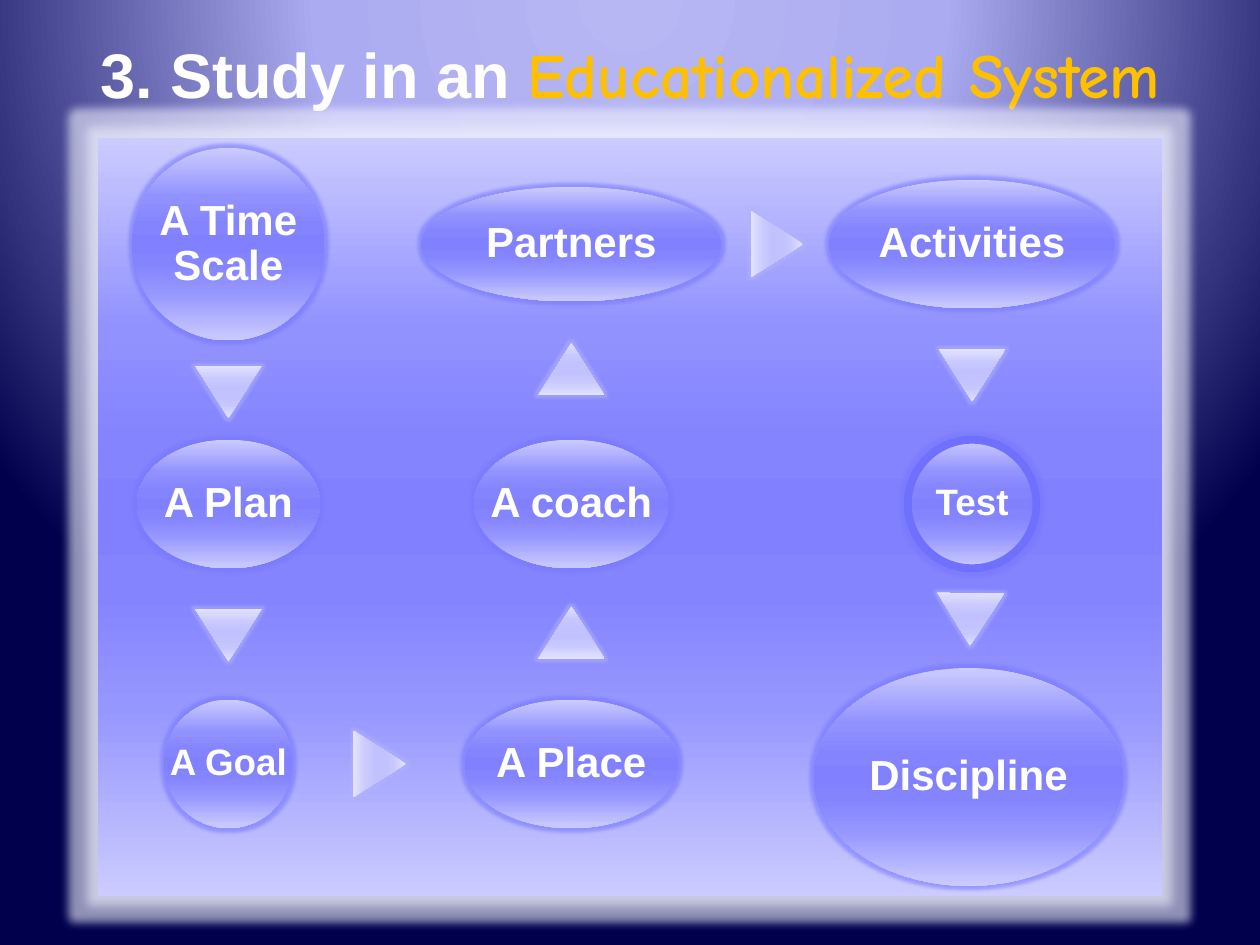
"""Build a slide showing the nine linked stages of an educational study system."""
import pptx
import pptx.util
import pptx.dml.color
import pptx.enum.shapes
import pptx.enum.text
import pptx.oxml
import pptx.oxml.ns
from lxml import etree

Pt = pptx.util.Pt
qn = pptx.oxml.ns.qn
SHAPES = pptx.enum.shapes.MSO_SHAPE

COLORS = {
    "text": "FFFFFF", "accent": "FFC000", "ring": "7070FF",
    "panel_glow": "F0F0FF", "stage_glow": "7878FF", "arrow_glow": "B4B4FF",
}
BACKGROUND = [(0, "B7B7F3"), (40, "ABABF1"), (100, "00004C")]
SHEEN_STOPS = (0, 25, 40, 50, 60, 75, 100)
STAGE_FILL = list(zip(SHEEN_STOPS, (
    "CBCBFF", "9292FF", "8484FF", "8181FF", "8484FF", "9696FF", "CBCBFF")))
ARROW_FILL = list(zip(SHEEN_STOPS, (
    "E2E2FF", "C7C7FF", "C2C2FF", "C1C1FF", "C2C2FF", "C9C9FF", "E2E2FF")))

TITLE = [("3. Study in an ", "Arial", "text"),
         ("Educationalized System", "Comic Neue", "accent")]
LEFT, MIDDLE, RIGHT = 130.5, 326.5, 555.5
TOP, CENTER, BOTTOM = 139.5, 288, 436.5
STAGES = [
    ("A Time\vScale", LEFT, TOP, 110, 110, 24),
    ("A Plan", LEFT, CENTER, 104.5, 73.5, 24),
    ("A Goal", LEFT, BOTTOM, 73.5, 73.5, 21),
    ("A Place", MIDDLE, BOTTOM, 122, 73.5, 24),
    ("A coach", MIDDLE, CENTER, 111, 73.5, 24),
    ("Partners", MIDDLE, TOP, 171.5, 65.5, 24),
    ("Activities", RIGHT, TOP, 163.5, 73.5, 24),
    ("Test", RIGHT, CENTER, 73.5, 73.5, 21),
    ("Discipline", 553.5, 444, 177, 124.5, 24),
]
ARROW_WIDTH, ARROW_HEIGHT = 38, 30
ARROWS = [
    (LEFT, 224, 180), (LEFT, 363, 180), (217, BOTTOM, 90),
    (MIDDLE, 361.5, 0), (MIDDLE, 211, 0), (444, TOP, 90),
    (RIGHT, 214.5, 180), (554.5, 354, 180.8),
]


def rgb(name):
    return pptx.dml.color.RGBColor.from_string(COLORS[name])


def set_gradient(fill, owner, stops, circle=False):
    fill.gradient()
    gradient = next(owner.iter(qn("a:gradFill")))
    for child in list(gradient):
        gradient.remove(child)
    stop_list = etree.SubElement(gradient, qn("a:gsLst"))
    for position, color in stops:
        stop = etree.SubElement(stop_list, qn("a:gs"), pos=str(position * 1000))
        etree.SubElement(stop, qn("a:srgbClr"), val=color)
    if circle:
        course = etree.SubElement(gradient, qn("a:path"), path="circle")
        etree.SubElement(course, qn("a:fillToRect"),
                         l="50000", t="-80000", r="50000", b="180000")
    else:
        etree.SubElement(gradient, qn("a:lin"), ang="5400000", scaled="0")


def add_glowing(page, kind, center_x, center_y, width, height, stops, glow, radius, alpha):
    shape = page.shapes.add_shape(kind, Pt(center_x - width / 2), Pt(center_y - height / 2),
                                  Pt(width), Pt(height))
    shape.shadow.inherit = False
    set_gradient(shape.fill, shape._element.spPr, stops)
    shape.line.fill.background()
    effects = shape._element.spPr.find(qn("a:effectLst"))
    halo = etree.SubElement(effects, qn("a:glow"), rad=str(int(Pt(radius))))
    color = etree.SubElement(halo, qn("a:srgbClr"), val=COLORS[glow])
    etree.SubElement(color, qn("a:alpha"), val=str(alpha * 1000))
    return shape


def write_text(box, parts, size, anchor, inset, spacing=1.0, wrap=False):
    frame = box.text_frame
    frame.word_wrap = wrap
    frame.auto_size = pptx.enum.text.MSO_AUTO_SIZE.NONE
    frame.vertical_anchor = anchor
    frame.margin_left = frame.margin_right = Pt(inset)
    frame.margin_top = frame.margin_bottom = Pt(inset)
    para = frame.paragraphs[0]
    para.alignment = pptx.enum.text.PP_ALIGN.CENTER
    para.line_spacing = spacing
    for text, font, color in parts:
        for index, line in enumerate(text.split("\v")):
            if index:
                para.add_line_break()
            span = para.add_run()
            span.text = line
            span.font.name = font
            span.font.size = Pt(size)
            span.font.bold = True
            span.font.color.rgb = rgb(color)


def main():
    deck = pptx.Presentation()
    deck.slide_width, deck.slide_height = Pt(720), Pt(540)
    page = deck.slides.add_slide(deck.slide_layouts[5])
    set_gradient(page.background.fill, page._element, BACKGROUND, circle=True)

    add_glowing(page, SHAPES.RECTANGLE, 360, 295.5, 608, 433.5, STAGE_FILL,
                "panel_glow", 11, 60)
    for text, center_x, center_y, width, height, size in STAGES:
        stage = add_glowing(page, SHAPES.OVAL, center_x, center_y, width, height,
                            STAGE_FILL, "stage_glow", 4, 60)
        write_text(stage, [(text, "Arial", "text")], size,
                   pptx.enum.text.MSO_ANCHOR.MIDDLE, 2, spacing=0.9)
        if text == "Test":
            stage.line.color.rgb = rgb("ring")
            stage.line.width = Pt(4.5)
    for center_x, center_y, rotation in ARROWS:
        arrow = add_glowing(page, SHAPES.ISOSCELES_TRIANGLE, center_x, center_y,
                            ARROW_WIDTH, ARROW_HEIGHT, ARROW_FILL, "arrow_glow", 3, 50)
        arrow.rotation = rotation

    title = page.shapes.title
    title.left, title.top, title.width, title.height = Pt(22.5), Pt(16.5), Pt(675), Pt(51)
    write_text(title, TITLE, 36, pptx.enum.text.MSO_ANCHOR.TOP, 4, wrap=True)
    deck.save("out.pptx")


if __name__ == "__main__":
    main()
